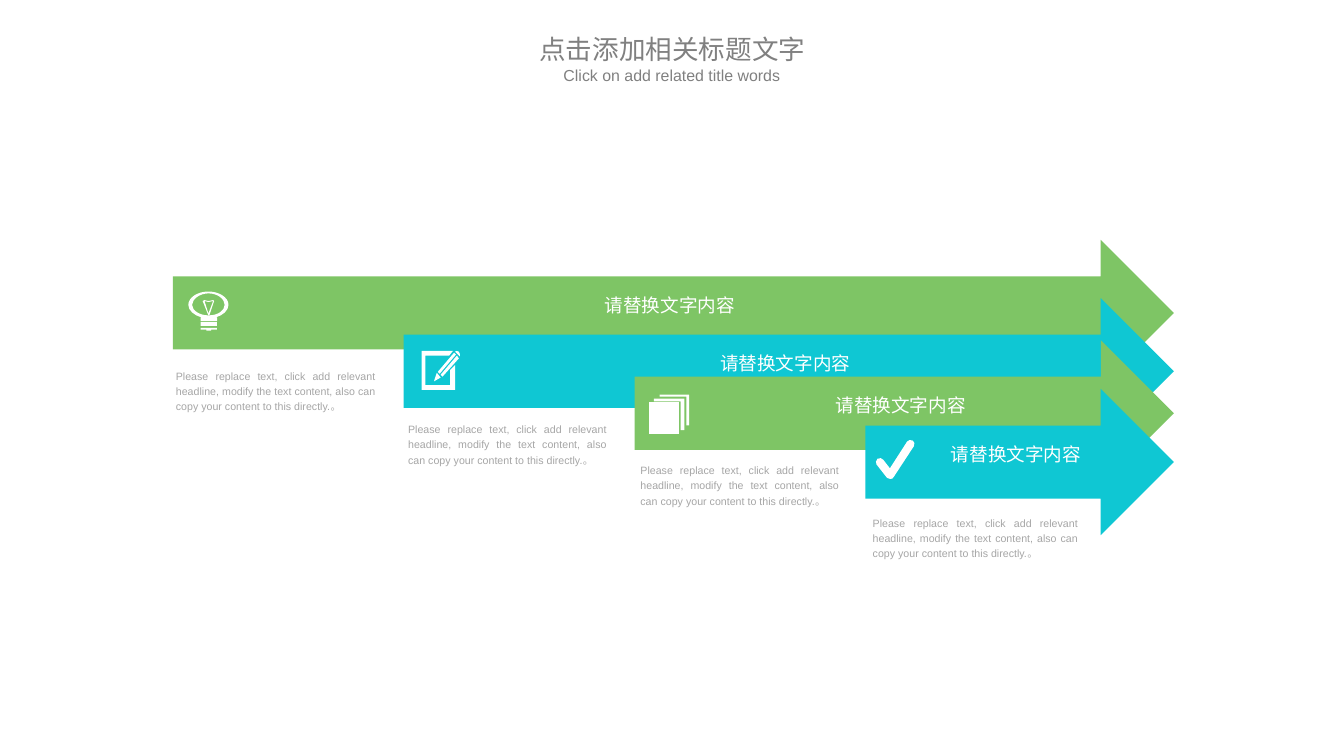
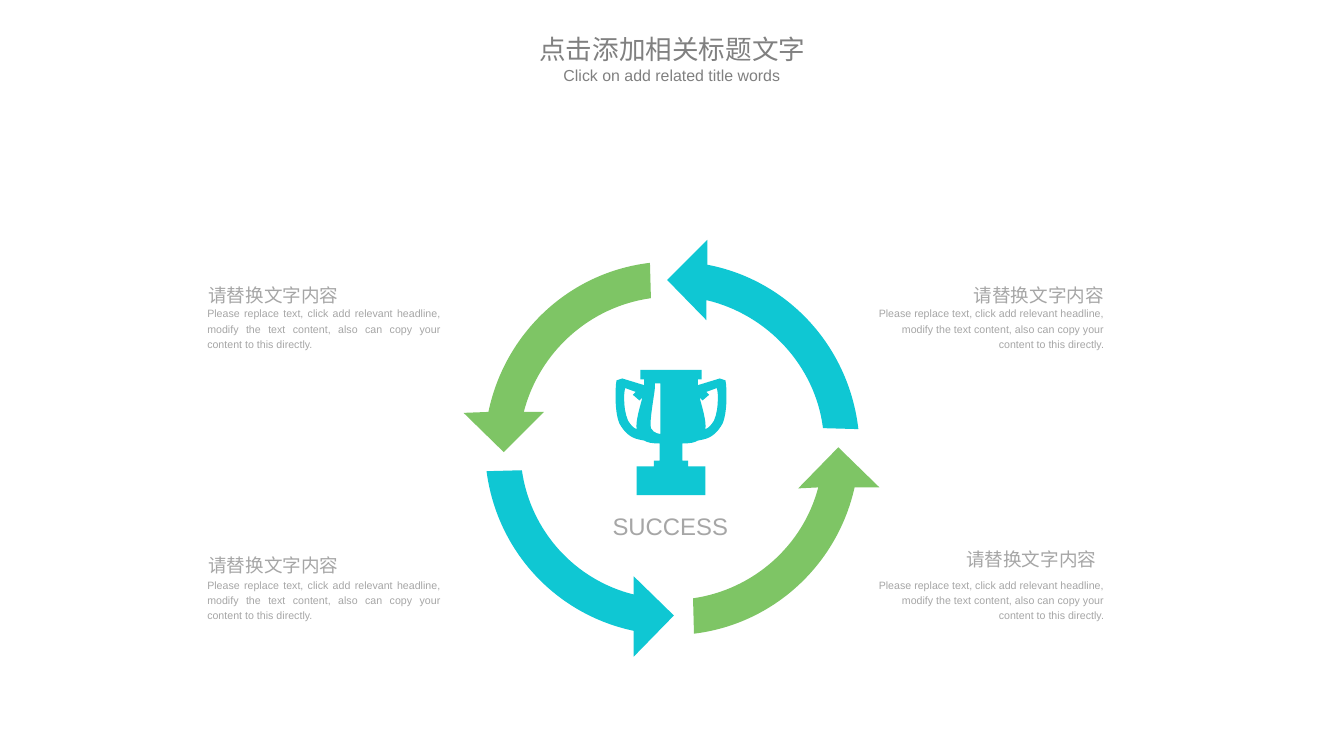
"""Build two slides: stacked arrows and a cycle around a trophy."""
import pptx
import pptx.dml.color
import pptx.enum.shapes
import pptx.enum.text
import pptx.oxml.ns
import pptx.util
from lxml import etree

Inches = pptx.util.Inches
Pt = pptx.util.Pt
RGBColor = pptx.dml.color.RGBColor
PP_ALIGN = pptx.enum.text.PP_ALIGN
MSO_ANCHOR = pptx.enum.text.MSO_ANCHOR
MSO_AUTO_SIZE = pptx.enum.text.MSO_AUTO_SIZE
MSO_SHAPE = pptx.enum.shapes.MSO_SHAPE
qualified = pptx.oxml.ns.qn

GREEN = RGBColor(0x7E, 0xC5, 0x65)
CYAN = RGBColor(0x0F, 0xC7, 0xD3)
WHITE = RGBColor(0xFF, 0xFF, 0xFF)
TITLE_GRAY = RGBColor(0x80, 0x80, 0x80)
TEXT_GRAY = RGBColor(0xA6, 0xA6, 0xA6)
LATIN_FONT = "Arial"
CHINESE_FONT = "Noto Sans CJK SC"

TITLE = "点击添加相关标题文字"
SUBTITLE = "Click on add related title words"
LABEL = "请替换文字内容"
NOTE = ("Please replace text, click add relevant headline, modify the text "
        "content, also can copy your content to this directly.")

CHECK_MARK = [
    (9.31, 5.01), (9.30, 5.01, 9.29, 5.01, 9.28, 5.0), (9.17, 4.86),
    (9.16, 4.84, 9.16, 4.82, 9.18, 4.80), (9.20, 4.79, 9.23, 4.79, 9.24, 4.81),
    (9.31, 4.90), (9.49, 4.62), (9.50, 4.60, 9.53, 4.60, 9.55, 4.61),
    (9.57, 4.62, 9.57, 4.65, 9.56, 4.67), (9.35, 4.99),
    (9.34, 5.01, 9.33, 5.01, 9.32, 5.01),
]
PAGES = [
    [[(6.84, 4.2), (7.12, 4.2), (7.12, 4.5), (7.16, 4.5), (7.16, 4.17), (6.84, 4.17)]],
    [[(6.9, 4.13), (6.9, 4.15), (7.18, 4.15), (7.18, 4.45), (7.21, 4.45), (7.21, 4.13)]],
    [[(6.79, 4.21), (6.79, 4.54), (7.1, 4.54), (7.1, 4.21)]],
]
PENCIL_ON_PAPER = [
    [[(4.61, 3.95), (4.57, 3.9), (4.54, 3.99)]],
    [[(4.75, 3.69), (4.58, 3.89), (4.6, 3.91), (4.77, 3.71)]],
    [[(4.61, 3.92), (4.63, 3.94), (4.8, 3.75), (4.78, 3.72)]],
    [[(4.8, 3.68), (4.79, 3.66, 4.76, 3.68, 4.76, 3.68), (4.81, 3.73),
      (4.81, 3.73, 4.82, 3.71, 4.8, 3.68)]],
    [[(4.71, 4.03), (4.45, 4.03), (4.45, 3.72), (4.7, 3.72), (4.74, 3.67), (4.41, 3.67),
      (4.41, 4.08), (4.76, 4.08), (4.76, 3.82), (4.71, 3.87)]],
]
BULB_GLASS = [
    [(2.39, 3.19), (2.39, 3.11, 2.29, 3.05, 2.18, 3.05), (2.07, 3.05, 1.97, 3.11, 1.97, 3.19),
     (1.97, 3.25, 2.03, 3.3, 2.11, 3.32), (2.1, 3.32), (2.1, 3.36), (2.27, 3.36),
     (2.27, 3.32), (2.26, 3.32), (2.33, 3.3, 2.39, 3.25, 2.39, 3.19)],
    [(2.18, 3.3), (2.09, 3.3, 2.01, 3.25, 2.01, 3.19), (2.01, 3.13, 2.09, 3.07, 2.18, 3.07),
     (2.28, 3.07, 2.35, 3.13, 2.35, 3.19), (2.35, 3.25, 2.28, 3.3, 2.18, 3.3)],
]
BULB_FOOT = [[(2.1, 3.45), (2.16, 3.45), (2.16, 3.46), (2.21, 3.46), (2.21, 3.45),
              (2.27, 3.45), (2.27, 3.43), (2.1, 3.43)]]
BULB_FILAMENT = [
    [(2.24, 3.15), (2.23, 3.14), (2.18, 3.15), (2.14, 3.14), (2.12, 3.15),
     (2.18, 3.3), (2.19, 3.3)],
    [(2.18, 3.28), (2.14, 3.15), (2.18, 3.16), (2.23, 3.15)],
]
CYCLE_ARROWS = [
    (CYAN, [(7.4, 2.77), (8.24, 2.93, 8.88, 3.62, 8.98, 4.49), (8.61, 4.48),
            (8.53, 3.83, 8.03, 3.29, 7.39, 3.14), (7.39, 3.35), (6.98, 2.93), (7.4, 2.51)]),
    (GREEN, [(8.35, 5.11), (8.56, 5.1), (8.4, 5.71, 7.88, 6.17, 7.25, 6.26), (7.26, 6.63),
             (8.09, 6.53, 8.76, 5.91, 8.94, 5.1), (9.2, 5.1), (8.77, 4.68)]),
    (CYAN, [(6.63, 6.87), (6.63, 6.6), (5.82, 6.43, 5.2, 5.77, 5.09, 4.93), (5.46, 4.92),
            (5.55, 5.56, 6.02, 6.07, 6.63, 6.22), (6.63, 6.03), (7.05, 6.44)]),
    (GREEN, [(4.85, 4.32), (5.11, 4.31), (5.28, 3.49, 5.95, 2.85, 6.8, 2.75), (6.81, 3.12),
             (6.16, 3.21, 5.64, 3.69, 5.48, 4.31), (5.69, 4.31), (5.27, 4.73)]),
]
TROPHY_AXIS = 7.02
TROPHY_LEFT_HALF = [
    (6.7, 3.87), (6.7, 3.97), (6.74, 3.97), (6.74, 4.03), (6.51, 3.96), (6.45, 3.98),
    (6.44, 4.03, 6.44, 4.10, 6.44, 4.16), (6.44, 4.25, 6.45, 4.36, 6.48, 4.43),
    (6.53, 4.52, 6.59, 4.58, 6.69, 4.60), (6.74, 4.61),
    (6.77, 4.63, 6.82, 4.64, 6.90, 4.64), (6.90, 4.82), (6.84, 4.82), (6.84, 4.88),
    (6.66, 4.88), (6.66, 5.18),
]
TROPHY_LEFT_HANDLE = [
    (6.72, 4.16), (6.69, 4.28, 6.65, 4.40, 6.66, 4.49), (6.63, 4.48, 6.60, 4.45, 6.57, 4.40),
    (6.54, 4.33, 6.53, 4.25, 6.53, 4.16), (6.53, 4.13, 6.53, 4.09, 6.54, 4.06),
    (6.65, 4.10), (6.62, 4.13), (6.69, 4.19),
]
TROPHY_SHINE = [
    (6.91, 4.01), (6.91, 4.54), (6.91, 4.54, 6.84, 4.54, 6.81, 4.48),
    (6.79, 4.42, 6.85, 4.10, 6.85, 4.07), (6.85, 4.01),
]


def mirror(outline):
    """Reflect an outline across the trophy axis, in reverse order."""
    pairs = [(item[i], item[i + 1]) for item in outline for i in range(0, len(item), 2)]
    flipped = [(2 * TROPHY_AXIS - x, y) for x, y in reversed(pairs)]
    result, used = [flipped[0]], 1
    for item in reversed(outline[1:]):
        count = len(item) // 2
        result.append(sum(flipped[used:used + count], ()))
        used += count
    return result


def paint(shape, color):
    """Give a shape a flat fill without line or shadow."""
    shape.fill.solid()
    shape.fill.fore_color.rgb = color
    shape.line.fill.background()
    shape.shadow.inherit = False
    return shape


def add_outline(slide, contours, color):
    """Draw closed contours of corners and six-number curves as one freeform."""
    builder = None
    for contour in contours:
        points = [(Inches(item[i]), Inches(item[i + 1]))
                  for item in contour for i in range(0, len(item), 2)]
        if builder is None:
            builder = slide.shapes.build_freeform(*points[0], scale=1.0)
        else:
            builder.move_to(*points[0])
        builder.add_line_segments(points[1:], close=True)
    shape = builder.convert_to_shape()
    segments = shape._element.iter(qualified("a:lnTo"))
    segments = iter(list(segments))
    for item in (item for contour in contours for item in contour[1:]):
        segment = next(segments)
        if len(item) == 6:
            segment.tag = qualified("a:cubicBezTo")
            for control in (next(segments), next(segments)):
                segment.append(control[0])
                control.getparent().remove(control)
    return paint(shape, color)


def write(shape, text, size, color, align, spacing=1.2, latin=LATIN_FONT):
    """Put one formatted run in the first paragraph of a shape."""
    paragraph = shape.text_frame.paragraphs[0]
    paragraph.alignment = align
    paragraph.line_spacing = spacing
    run = paragraph.add_run()
    run.text = text
    run.font.size = Pt(size)
    run.font.name = latin
    run.font.color.rgb = color
    east_asian = etree.Element(qualified("a:ea"), typeface=CHINESE_FONT)
    run.font._element.find(qualified("a:latin")).addnext(east_asian)


def add_text(slide, box, text, size, color=TEXT_GRAY, align=PP_ALIGN.JUSTIFY,
             wrap=True, spacing=1.2, margin=0.1):
    """Add a text box given as left, top, width, height."""
    shape = slide.shapes.add_textbox(*map(Inches, box))
    frame = shape.text_frame
    frame.word_wrap = wrap
    frame.auto_size = MSO_AUTO_SIZE.SHAPE_TO_FIT_TEXT
    frame.margin_left = frame.margin_right = Inches(margin)
    write(shape, text, size, color, align, spacing)


def add_titled_slide(presentation):
    """Add a slide with the shared title and subtitle."""
    slide = presentation.slides.add_slide(presentation.slide_layouts[5])
    title = slide.shapes.title
    title.left, title.top, title.width, title.height = map(Inches, (5.36, 0.31, 3.35, 0.41))
    title.text_frame.auto_size = MSO_AUTO_SIZE.NONE
    title.text_frame.vertical_anchor = MSO_ANCHOR.MIDDLE
    title.text_frame.margin_top = title.text_frame.margin_bottom = 0
    write(title, TITLE, 20, TITLE_GRAY, PP_ALIGN.CENTER, 1.0, CHINESE_FONT)
    add_text(slide, (5.76, 0.64, 2.54, 0.41), SUBTITLE, 12, TITLE_GRAY,
             PP_ALIGN.CENTER, spacing=1.0)
    return slide


def add_banner_arrow(slide, left, top, color):
    """Add a labelled arrow that ends at the common right edge."""
    arrow = slide.shapes.add_shape(MSO_SHAPE.RIGHT_ARROW, Inches(left), Inches(top),
                                   Inches(12.28 - left), Inches(1.53))
    paint(arrow, color)
    frame = arrow.text_frame
    frame.vertical_anchor = MSO_ANCHOR.MIDDLE
    frame.margin_left, frame.margin_right = Inches(0.59), Inches(0.28)
    frame.margin_top, frame.margin_bottom = Inches(0.05), Inches(0.26)
    write(arrow, LABEL, 14, WHITE, PP_ALIGN.CENTER)


def add_icons(slide):
    """Add the white icons, each of several parts grouped."""
    add_outline(slide, [CHECK_MARK], WHITE)
    bulb_ring = slide.shapes.add_shape(MSO_SHAPE.RECTANGLE, Inches(2.1), Inches(3.37),
                                       Inches(0.17), Inches(0.04))
    paint(bulb_ring, WHITE)
    bulb = [BULB_GLASS, BULB_FOOT, BULB_FILAMENT]
    for icon, extra in ((PAGES, []), (bulb, [bulb_ring]), (PENCIL_ON_PAPER, [])):
        parts = [add_outline(slide, part, WHITE) for part in icon]
        slide.shapes.add_group_shape(extra + parts)


def build_arrows_slide(presentation):
    """Build the four stacked arrows with icons and notes."""
    slide = add_titled_slide(presentation)
    rows = [(2.51, 3.79, 2.31), (3.12, 4.35, 2.3), (3.56, 4.78, 2.3), (4.07, 5.33, 2.37)]
    for index, (_, note_top, note_width) in enumerate(rows):
        add_text(slide, (1.73 + 2.43 * index, note_top, note_width, 0.58), NOTE + "。", 8,
                 margin=0.11)
    for index, (arrow_top, _, _) in enumerate(rows):
        add_banner_arrow(slide, 1.81 + 2.414 * index, arrow_top, (GREEN, CYAN)[index % 2])
    add_icons(slide)


def build_cycle_slide(presentation):
    """Build the ring of arrows, the trophy and four captions."""
    slide = add_titled_slide(presentation)
    arrows = [add_outline(slide, [outline], color) for color, outline in CYCLE_ARROWS]
    slide.shapes.add_group_shape(arrows)
    body = TROPHY_LEFT_HALF + mirror(TROPHY_LEFT_HALF)
    add_outline(slide, [body, TROPHY_LEFT_HANDLE, mirror(TROPHY_LEFT_HANDLE), TROPHY_SHINE],
                CYAN)
    add_text(slide, (6.31, 5.24, 1.42, 0.43), "SUCCESS", 18, wrap=False)

    left, right = PP_ALIGN.LEFT, PP_ALIGN.RIGHT
    captions = [(2.08, 2.88, left), (2.08, 5.7, left), (10.07, 2.88, right), (9.99, 5.64, right)]
    for index, (label_left, label_top, align) in enumerate(captions):
        add_text(slide, (label_left, label_top, 1.58, 0.36), LABEL, 14, align=align, wrap=False)
        note_top = (3.14, 5.98)[index % 2]
        if align == left:
            add_text(slide, (2.07, note_top, 2.64, 0.57), NOTE, 8)
        else:
            add_text(slide, (9.08, note_top, 2.57, 0.57), NOTE, 8, align=right)


def main():
    """Create and save the presentation."""
    presentation = pptx.Presentation()
    presentation.slide_width = Inches(14.06)
    presentation.slide_height = Inches(7.91)
    build_arrows_slide(presentation)
    build_cycle_slide(presentation)
    presentation.save("out.pptx")


if __name__ == "__main__":
    main()
